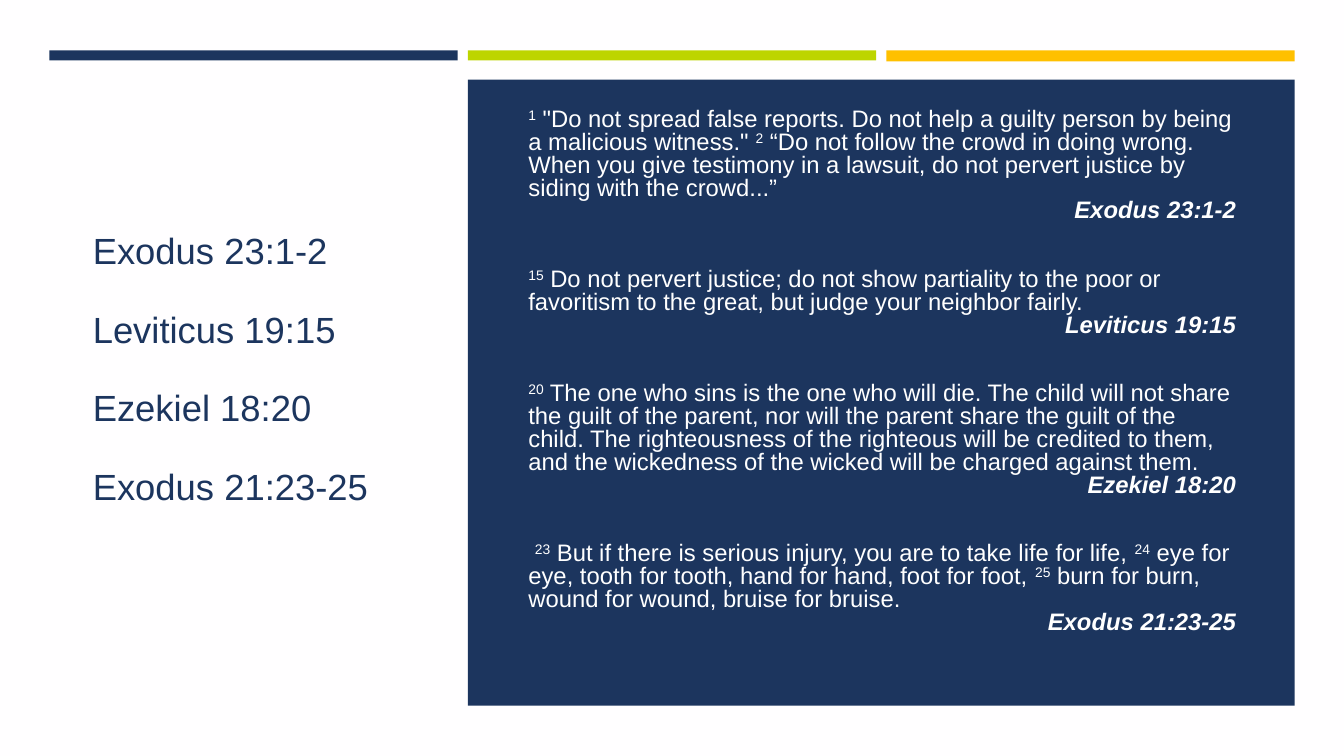
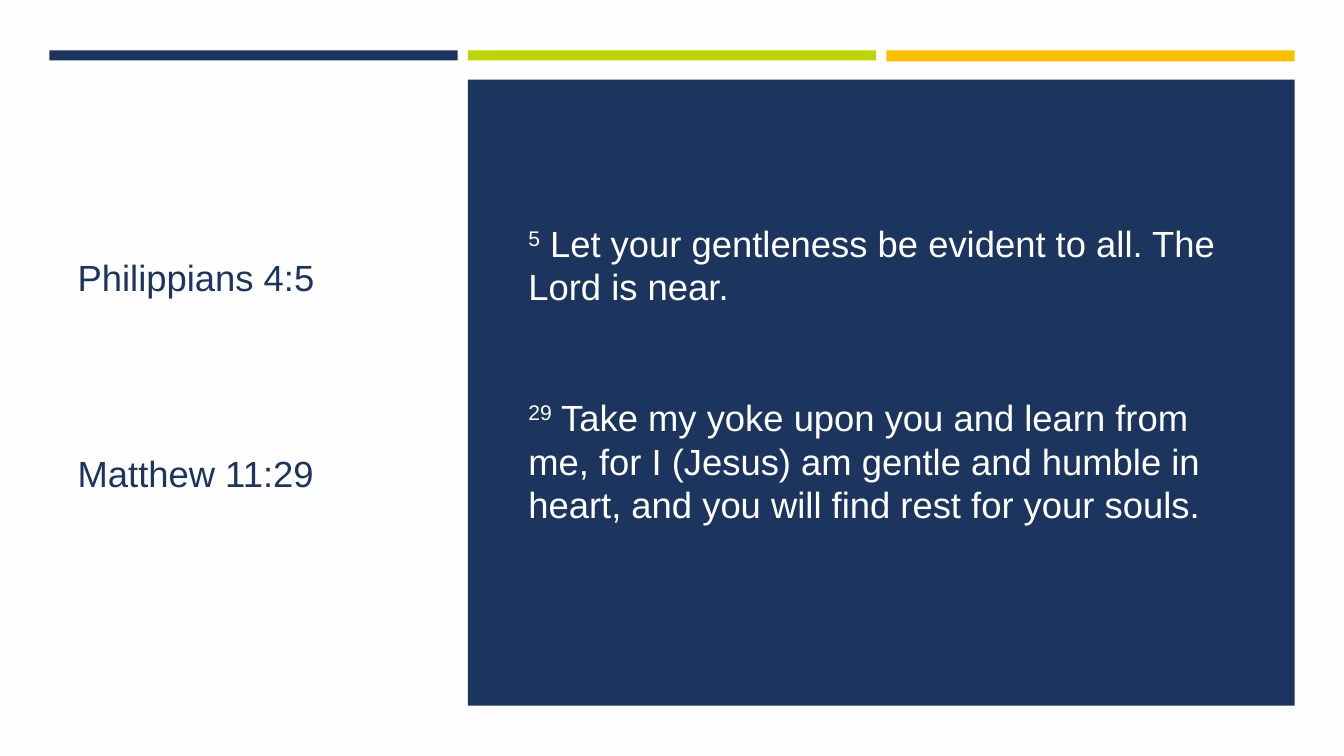
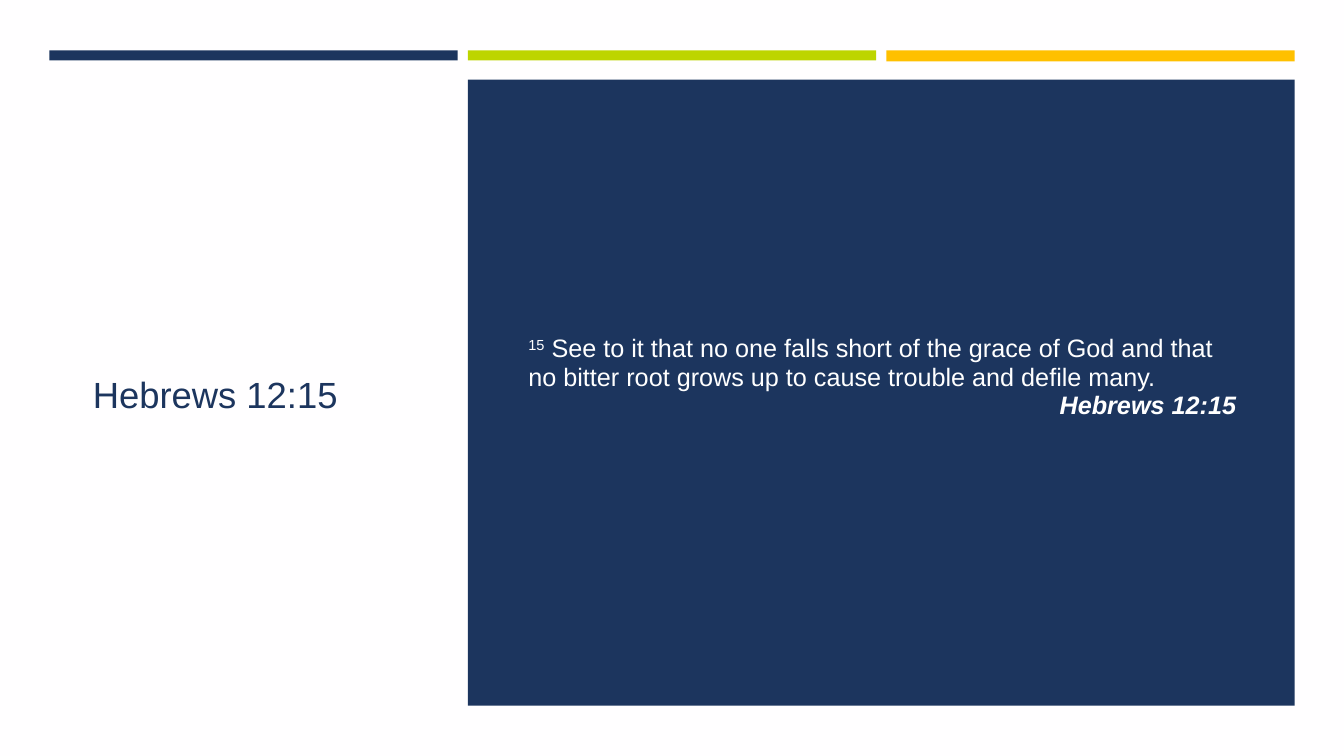
from pptx import Presentation
from pptx.dml.color import RGBColor
from pptx.enum import shapes, text
from pptx.oxml.ns import qn
from pptx.util import Inches, Pt

NAVY = RGBColor(0x1C, 0x35, 0x5E)
LIME = RGBColor(0xBD, 0xD5, 0x00)
AMBER = RGBColor(0xFF, 0xC0, 0x00)
WHITE = RGBColor(0xFF, 0xFF, 0xFF)
PAPER = RGBColor(0xFF, 0xFE, 0xFF)

LEFT, RIGHT = text.PP_ALIGN.LEFT, text.PP_ALIGN.RIGHT
BAND_W, BAND_STEP = 4.05, 4.15

# left, top, width, height, fill
BLOCKS = [(0.49 + i * BAND_STEP, 0.5, BAND_W, h, c)
          for i, (c, h) in enumerate([(NAVY, 0.1), (LIME, 0.1), (AMBER, 0.11)])]
BLOCKS.append((4.64, 0.79, 8.2, 6.21, NAVY))

# Verse numbers stand between ^ marks; each passage is (verse, reference).
SLIDES = [
    {
        "title": ["Exodus 23:1-2", "Leviticus 19:15", "Ezekiel 18:20", "Exodus 21:23-25"],
        "title_at": (0.82, 1.17, 3.34, 5.02), "title_gap": 28, "title_top": 0.05,
        "body_at": (5.14, 1.17, 7.22, 5.49), "body_gap": 32.6, "body_bottom": 0.5,
        "size": 17, "spacing": 0.8,
        "passages": [
            ("^1^ \"Do not spread false reports. Do not help a guilty person by being a "
             "malicious witness.\" ^2^ “Do not follow the crowd in doing wrong. When you give "
             "testimony in a lawsuit, do not pervert justice by siding with the crowd...”",
             "Exodus 23:1-2"),
            ("^15^ Do not pervert justice; do not show partiality to the poor or favoritism "
             "to the great, but judge your neighbor fairly.",
             "Leviticus 19:15"),
            ("^20^ The one who sins is the one who will die. The child will not share the "
             "guilt of the parent, nor will the parent share the guilt of the child. The "
             "righteousness of the righteous will be credited to them, and the wickedness of "
             "the wicked will be charged against them.",
             "Ezekiel 18:20"),
            (" ^23^ But if there is serious injury, you are to take life for life, ^24^ eye "
             "for eye, tooth for tooth, hand for hand, foot for foot, ^25^ burn for burn, "
             "wound for wound, bruise for bruise.",
             "Exodus 21:23-25"),
        ],
    },
    {
        "title": ["Philippians 4:5", "Matthew 11:29"],
        "title_at": (0.67, 1.17, 3.48, 5.15), "title_gap": 112, "title_top": 0.05,
        "body_at": (5.14, 1.01, 7.22, 5.82), "body_gap": 62, "body_bottom": 0.48,
        "size": 26, "spacing": 1.0,
        "passages": [
            ("^5^ Let your gentleness be evident to all. The Lord is near.", None),
            ("^29^ Take my yoke upon you and learn from me, for I (Jesus) am gentle and humble "
             "in heart, and you will find rest for your souls.", None),
        ],
    },
    {
        "title": ["Hebrews 12:15"],
        "title_at": (0.82, 1.17, 3.34, 5.15), "title_gap": 0, "title_top": 0.44,
        "body_at": (5.14, 1.17, 7.22, 5.15), "body_gap": 0, "body_bottom": 0.05,
        "size": 18, "spacing": 0.94,
        "passages": [
            ("^15^ See to it that no one falls short of the grace of God and that no bitter "
             "root grows up to cause trouble and defile many.",
             "Hebrews 12:15"),
        ],
    },
]


def place(sp, at, top=0.05, bottom=0.05):
    """Move a placeholder and give its text frame the shared settings."""
    sp.left, sp.top, sp.width, sp.height = map(Inches, at)
    frame = {"word_wrap": True, "auto_size": text.MSO_AUTO_SIZE.NONE,
             "vertical_anchor": text.MSO_ANCHOR.MIDDLE,
             "margin_left": Inches(0.1), "margin_right": Inches(0.1),
             "margin_top": Inches(top), "margin_bottom": Inches(bottom)}
    for name, value in frame.items():
        setattr(sp.text_frame, name, value)
    return sp.text_frame


def write(tf, first, words, size, color, spacing, gap=0, align=LEFT, strong=None):
    """Add a paragraph without a bullet; parts between ^ marks are superscript."""
    p = tf.paragraphs[0] if first else tf.add_paragraph()
    layout = {"alignment": align, "line_spacing": spacing,
              "space_before": Pt(0 if first else gap), "space_after": Pt(0)}
    for name, value in layout.items():
        setattr(p, name, value)
    pPr = p._p.get_or_add_pPr()
    pPr.set("marL", "0")
    pPr.set("indent", "0")
    pPr.append(pPr.makeelement(qn("a:buNone"), {}))
    for i, part in enumerate(words.split("^")):
        if not part:
            continue
        r = p.add_run()
        r.text = part
        font = {"name": "Arial", "size": Pt(size), "bold": strong, "italic": strong}
        for name, value in font.items():
            setattr(r.font, name, value)
        r.font.color.rgb = color
        if i % 2:
            r._r.get_or_add_rPr().set("baseline", "30000")


prs = Presentation()
prs.slide_width, prs.slide_height = Inches(13.33), Inches(7.5)
background = prs.slide_master.background.fill
background.solid()
background.fore_color.rgb = PAPER

for page in SLIDES:
    s = prs.slides.add_slide(prs.slide_layouts[1])
    title, body = s.shapes.title, s.placeholders[1]

    for *at, color in BLOCKS:
        sp = s.shapes.add_shape(shapes.MSO_SHAPE.RECTANGLE, *map(Inches, at))
        sp.shadow.inherit = False
        sp.fill.solid()
        sp.fill.fore_color.rgb = color
        sp.line.fill.background()
    s.shapes.element.append(body.element)  # bring the verses in front of the panel

    tf = place(title, page["title_at"], top=page["title_top"])
    for i, reference in enumerate(page["title"]):
        write(tf, i == 0, reference, 26, NAVY, 0.9, page["title_gap"])

    tf = place(body, page["body_at"], bottom=page["body_bottom"])
    style = (page["size"], WHITE, page["spacing"])
    for i, (verse, reference) in enumerate(page["passages"]):
        write(tf, i == 0, verse, *style, gap=page["body_gap"])
        if reference:
            write(tf, False, reference, *style, align=RIGHT, strong=True)

prs.save("out.pptx")
